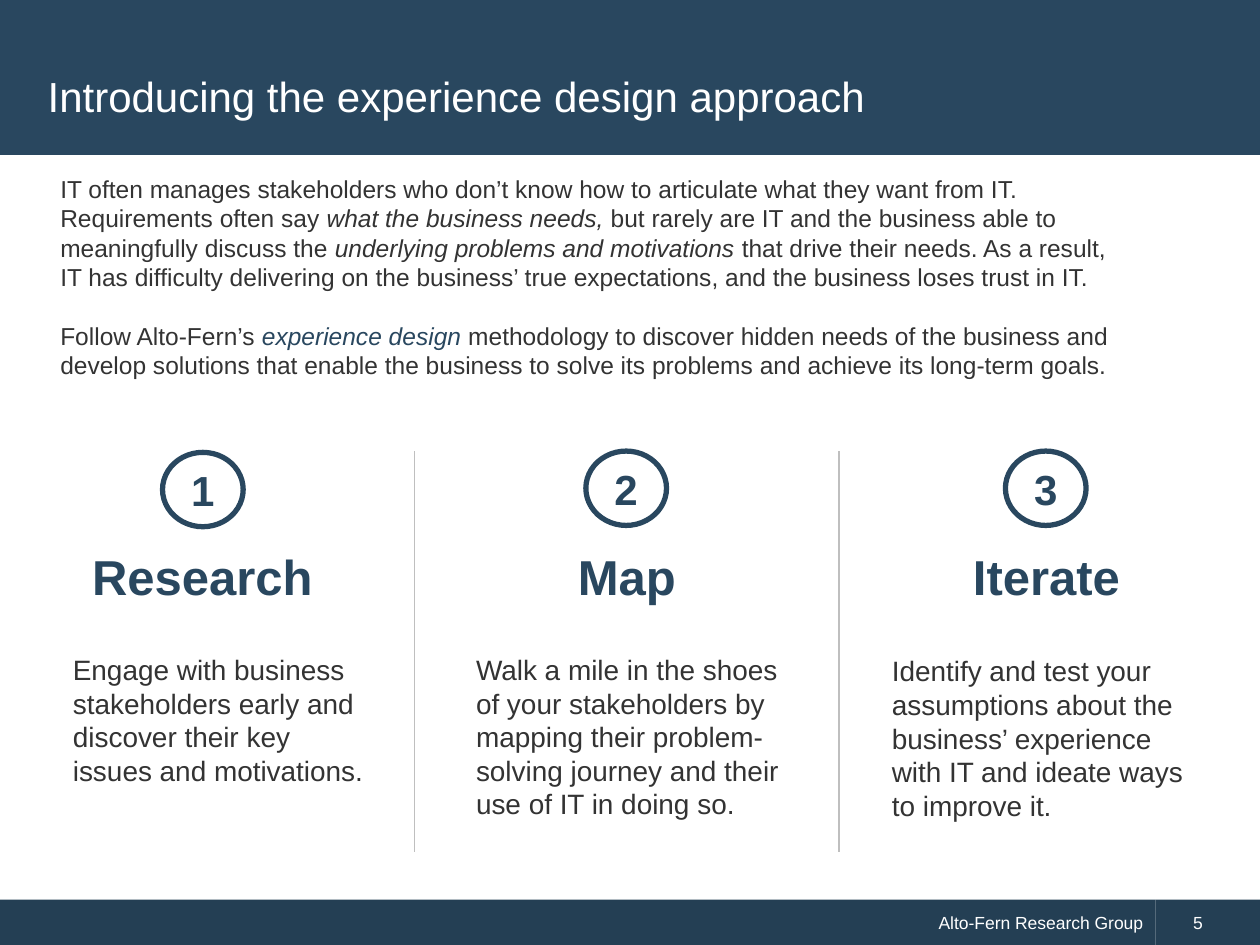
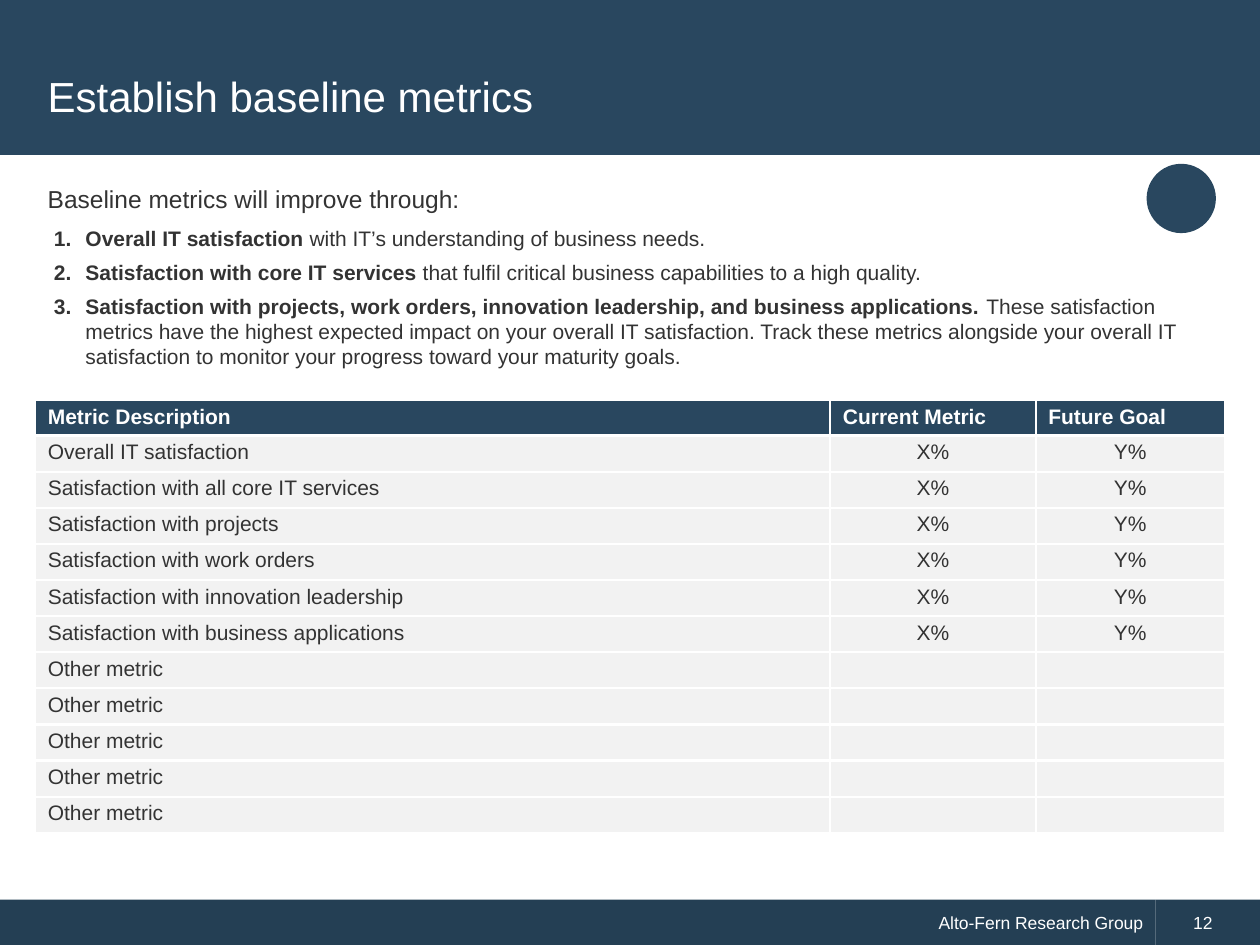
from dataclasses import dataclass
from typing import NamedTuple

from lxml.etree import SubElement
from pptx import Presentation
from pptx.dml.color import RGBColor
from pptx.enum.shapes import MSO_CONNECTOR, MSO_SHAPE
from pptx.enum.text import MSO_ANCHOR as Anchor, PP_ALIGN as Align
from pptx.oxml.ns import qn
from pptx.util import Inches, Pt


@dataclass(frozen=True)
class Theme:
    font: str = "Arial"
    navy: str = "29475F"
    footer: str = "243F54"
    ink: str = "333333"
    rule: str = "BFBFBF"
    row: str = "F2F2F2"
    white: str = "FFFFFF"
    title: float = 24
    heading: float = 28
    detail: float = 16
    body: float = 14
    small: float = 12
    note: float = 10


THEME = Theme()
COMPANY = "Alto-Fern"


class Box(NamedTuple):
    left: float
    top: float
    width: float
    height: float

    def lengths(self) -> list:
        return [Inches(value) for value in self]


class Span(NamedTuple):
    text: str
    bold: bool = False
    italic: bool = False
    color: str | None = None


class Step(NamedTuple):
    name: str
    detail: str
    circle: Box
    name_box: Box
    detail_box: Box


STEPS = [
    Step("Research",
         "Engage with business stakeholders early and discover their key issues and motivations.",
         Box(1.29, 3.59, 0.64, 0.59), Box(0.45, 4.29, 2.31, 0.57), Box(0.48, 5.13, 2.61, 1.18)),
    Step("Map",
         "Walk a mile in the shoes of your stakeholders by mapping their problem-solving journey "
         "and their use of IT in doing so.",
         Box(4.65, 3.58, 0.64, 0.59), Box(3.82, 4.29, 2.31, 0.57), Box(3.68, 5.13, 2.63, 1.45)),
    Step("Iterate",
         "Identify and test your assumptions about the business’ experience with IT and ideate "
         "ways to improve it.",
         Box(7.98, 3.58, 0.64, 0.59), Box(7.09, 4.29, 2.43, 0.57), Box(6.98, 5.14, 2.63, 1.45)),
]
DIVIDERS = (3.29, 6.66)

INTRODUCTION = [
    [Span("IT often manages stakeholders who don’t know how to articulate what they want from IT. "
          "Requirements often say "),
     Span("what the business needs,", italic=True),
     Span(" but rarely are IT and the business able to meaningfully discuss the "),
     Span("underlying problems and motivations ", italic=True),
     Span("that drive their needs. As a result, IT has difficulty delivering on the business’ "
          "true expectations, and the business loses trust in IT.")],
    [Span(f"Follow {COMPANY}’s "),
     Span("experience design ", italic=True, color=THEME.navy),
     Span("methodology to discover hidden needs of the business and develop solutions that "
          "enable the business to solve its problems and achieve its long-term goals.")],
]

IMPROVEMENTS = [
    [Span("Overall IT satisfaction ", bold=True),
     Span("with IT’s understanding of business needs.")],
    [Span("Satisfaction with core IT services ", bold=True),
     Span("that fulfil critical business capabilities to a high quality.")],
    [Span("Satisfaction with projects, work orders, innovation leadership, and business "
          "applications. ", bold=True),
     Span("These satisfaction metrics have the highest expected impact on your overall IT "
          "satisfaction. Track these metrics alongside your overall IT satisfaction to monitor "
          "your progress toward your maturity goals.")],
]

HEADER = ("Metric Description", "Current Metric", "Future Goal")
METRICS = ("Overall IT satisfaction", "Satisfaction with all core IT services",
           "Satisfaction with projects", "Satisfaction with work orders",
           "Satisfaction with innovation leadership", "Satisfaction with business applications")
METRIC_ROWS = [(metric, "X%", "Y%") for metric in METRICS] + [("Other metric", "", "")] * 5
COLUMN_WIDTHS = (6.31, 1.63, 1.5)
TABLE_BOX = Box(0.28, 3.17, 9.43, 3.44)


def rgb(color: str) -> RGBColor:
    return RGBColor.from_string(color)


def write_spans(para, spans: list[Span], *, size: float, color: str = THEME.ink,
                align=Align.LEFT, before: float = 0) -> None:
    para.alignment = align
    para.space_before = Pt(before)
    for part in spans:
        span = para.add_run()
        span.text = part.text
        font = span.font
        font.name, font.size = THEME.font, Pt(size)
        font.bold, font.italic = part.bold, part.italic
        font.color.rgb = rgb(part.color or color)


def add_text(page, box: Box, paragraphs: list[list[Span]], *, size: float,
             color: str = THEME.ink, align=Align.LEFT, anchor=Anchor.TOP,
             gap: float = 0, wrap: bool = True):
    """Add a text box; gap is the space before each paragraph after the first."""
    frame = page.shapes.add_textbox(*box.lengths()).text_frame
    frame.word_wrap = wrap
    frame.vertical_anchor = anchor
    for index, spans in enumerate(paragraphs):
        para = frame.add_paragraph() if index else frame.paragraphs[0]
        write_spans(para, spans, size=size, color=color, align=align, before=gap if index else 0)
    return frame


def add_block(page, kind, box: Box, *, fill: str | None = None, line: str | None = None):
    block = page.shapes.add_shape(kind, *box.lengths())
    block.shadow.inherit = False
    if fill:
        block.fill.solid()
        block.fill.fore_color.rgb = rgb(fill)
    else:
        block.fill.background()
    if line:
        block.line.color.rgb = rgb(line)
        block.line.width = Pt(3)
    else:
        block.line.fill.background()
    block.text_frame.vertical_anchor = Anchor.MIDDLE
    return block


def add_divider(page, left: float) -> None:
    divider = page.shapes.add_connector(
        MSO_CONNECTOR.STRAIGHT, Inches(left), Inches(3.58), Inches(left), Inches(6.76))
    divider.line.color.rgb = rgb(THEME.rule)
    divider.line.width = Pt(0.75)
    SubElement(divider._element.spPr, qn("a:effectLst"))


def add_page(deck, title: str, number: int):
    """Add a blank page with the title band and the footer."""
    page = deck.slides.add_slide(deck.slide_layouts[6])
    for box, text, align, inset in (
            (Box(0, 7.14, 9.17, 0.37), f"{COMPANY} Research Group", Align.RIGHT, 0.1),
            (Box(9.17, 7.14, 0.83, 0.37), str(number), Align.LEFT, 0.3)):
        frame = add_block(page, MSO_SHAPE.RECTANGLE, box, fill=THEME.footer).text_frame
        frame.margin_left = Inches(inset)
        write_spans(frame.paragraphs[0], [Span(text)], size=THEME.note,
                    color=THEME.white, align=align)
    add_block(page, MSO_SHAPE.RECTANGLE, Box(0, 0, 10, 1.23), fill=THEME.navy)
    add_text(page, Box(0.28, 0.28, 9.43, 0.96), [[Span(title)]], size=THEME.title,
             color=THEME.white, anchor=Anchor.MIDDLE)
    return page


def add_step(page, number: int, step: Step) -> None:
    circle = add_block(page, MSO_SHAPE.OVAL, step.circle, line=THEME.navy)
    write_spans(circle.text_frame.paragraphs[0], [Span(str(number), bold=True)],
                size=THEME.title, color=THEME.navy, align=Align.CENTER)
    add_text(page, step.name_box, [[Span(step.name, bold=True)]], size=THEME.heading,
             color=THEME.navy, align=Align.CENTER)
    add_text(page, step.detail_box, [[Span(step.detail)]], size=THEME.detail)


def number_paragraph(para) -> None:
    properties = para._p.get_or_add_pPr()
    properties.set("marL", str(Inches(0.25)))
    properties.set("indent", str(-Inches(0.25)))
    SubElement(properties, qn("a:buFont"), typeface=THEME.font)
    SubElement(properties, qn("a:buAutoNum"), type="arabicPeriod")


def fill_cell(cell, text: str, *, fill: str, color: str, bold: bool, align, anchor) -> None:
    properties = cell._tc.get_or_add_tcPr()
    for side in "LRTB":
        border = SubElement(properties, qn(f"a:ln{side}"), w=str(Pt(1.5)))
        SubElement(SubElement(border, qn("a:solidFill")), qn("a:srgbClr"), val=THEME.white)
    cell.fill.solid()
    cell.fill.fore_color.rgb = rgb(fill)
    cell.margin_top = cell.margin_bottom = Inches(0.04)
    cell.vertical_anchor = anchor
    para = cell.text_frame.paragraphs[0]
    write_spans(para, [Span(text, bold=bold)] if text else [], size=THEME.small,
                color=color, align=align)
    if not text:
        SubElement(para._p, qn("a:endParaRPr"), sz=str(int(THEME.small * 100)))


def add_metric_table(page) -> None:
    rows = [HEADER, *METRIC_ROWS]
    table = page.shapes.add_table(len(rows), len(HEADER), *TABLE_BOX.lengths()).table
    for column, width in zip(table.columns, COLUMN_WIDTHS):
        column.width = Inches(width)
    for row_index, values in enumerate(rows):
        table.rows[row_index].height = Inches(TABLE_BOX.height / len(rows))
        head = row_index == 0
        for column_index, value in enumerate(values):
            fill_cell(table.cell(row_index, column_index), value,
                      fill=THEME.navy if head else THEME.row,
                      color=THEME.white if head else THEME.ink, bold=head,
                      align=Align.LEFT if head or column_index == 0 else Align.CENTER,
                      anchor=Anchor.MIDDLE if head else Anchor.TOP)


def build_approach(deck) -> None:
    page = add_page(deck, "Introducing the experience design approach", 5)
    for left in DIVIDERS:
        add_divider(page, left)
    for number, step in enumerate(STEPS, start=1):
        add_step(page, number, step)
    add_text(page, Box(0.38, 1.33, 8.71, 1.75), INTRODUCTION, size=THEME.body, gap=16.8)


def build_metrics(deck) -> None:
    page = add_page(deck, "Establish baseline metrics", 12)
    add_block(page, MSO_SHAPE.OVAL, Box(9.1, 1.3, 0.55, 0.55), fill=THEME.navy)
    add_metric_table(page)
    improvements = add_text(page, Box(0.33, 1.74, 9.32, 1.37), IMPROVEMENTS, size=THEME.small)
    for para in improvements.paragraphs:
        para.space_before = Pt(5)
        number_paragraph(para)
    add_text(page, Box(0.28, 1.41, 3.49, 0.34),
             [[Span("Baseline metrics will improve through:")]], size=THEME.body, wrap=False)


def main() -> None:
    deck = Presentation()
    deck.slide_width, deck.slide_height = Inches(10), Inches(7.5)
    build_approach(deck)
    build_metrics(deck)
    deck.save("out.pptx")


if __name__ == "__main__":
    main()
